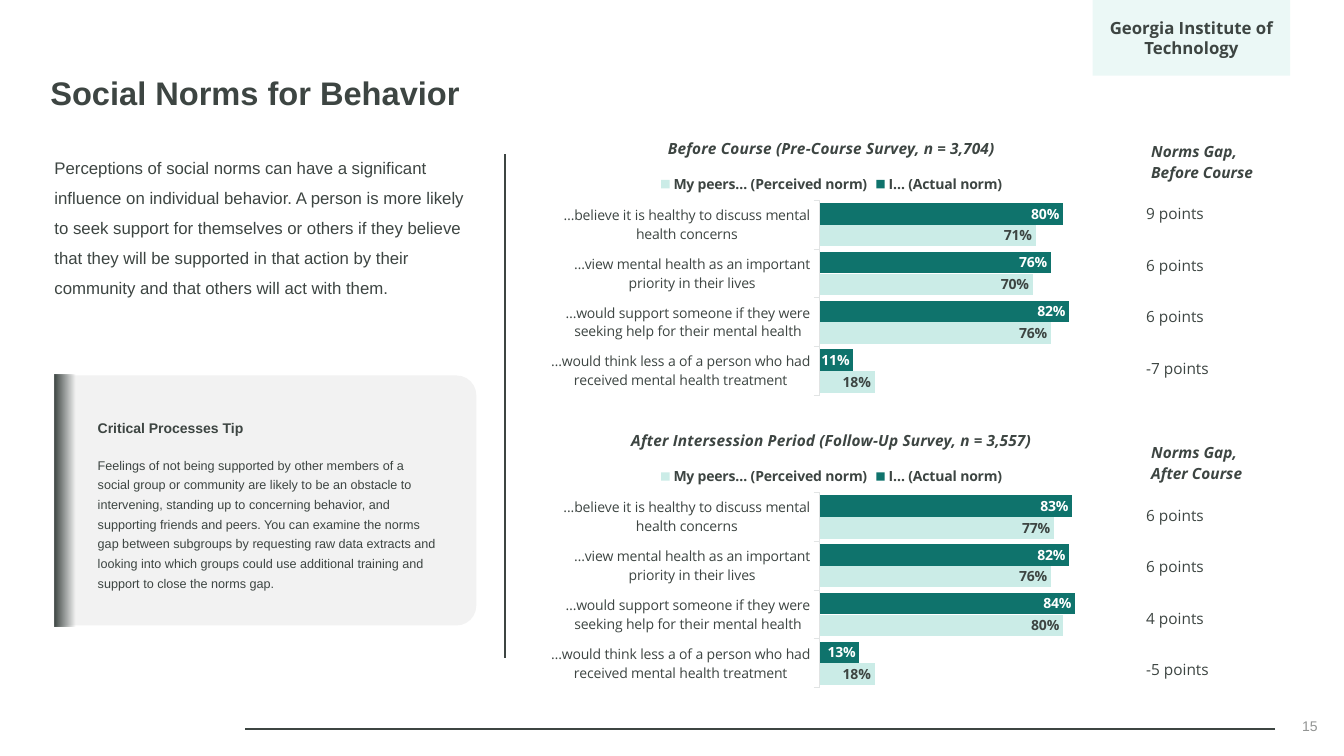
from dataclasses import dataclass

from lxml.etree import SubElement
from pptx import Presentation
from pptx.chart.chart import Chart
from pptx.chart.data import CategoryChartData
from pptx.dml.color import RGBColor
from pptx.enum.chart import XL_CHART_TYPE, XL_LABEL_POSITION, XL_LEGEND_POSITION, XL_TICK_MARK
from pptx.enum.shapes import MSO_CONNECTOR, MSO_SHAPE
from pptx.enum.text import MSO_ANCHOR, MSO_AUTO_SIZE, PP_ALIGN
from pptx.oxml.ns import qn
from pptx.shapes.autoshape import Shape
from pptx.slide import Slide
from pptx.text.text import Font, TextFrame
from pptx.util import Inches, Pt

# The slide is a grid of 160 columns by 90 rows of square cells
COLUMNS, ROWS = 160, 90
CELL = Inches(13.333) / COLUMNS


@dataclass(frozen=True)
class Theme:
    ink: str = "3D4542"
    own: str = "0F736C"
    peers: str = "CBECE7"
    accent: str = "3CC0AF"
    card: str = "F2F2F2"
    axis: str = "E1E4E4"
    muted: str = "929493"
    white: str = "FFFFFF"
    sans: str = "Arial"
    humanist: str = "Open Sans"
    title_size: float = 23.3
    body_size: float = 12
    heading_size: float = 11
    label_size: float = 10
    tip_size: float = 9


THEME = Theme()


@dataclass(frozen=True)
class Area:
    column: float
    row: float
    columns: float
    rows: float

    def box(self) -> tuple[int, int, int, int]:
        return cells(self.column), cells(self.row), cells(self.columns), cells(self.rows)


@dataclass(frozen=True)
class Rule:
    start: tuple[float, float]
    end: tuple[float, float]
    weight: float


@dataclass(frozen=True)
class Survey:
    title: str
    gap_heading: str
    chart_row: float
    table_row: float
    categories: tuple[str, ...]
    own: tuple[int, ...]
    peers: tuple[int, ...]


BELIEFS = (
    "…view mental health as an important priority in their lives",
    "…would support someone if they were seeking help for their mental health",
    "…would think less a of a person who had received mental health treatment",
)
SURVEYS = (
    Survey("Before Course (Pre-Course Survey, n = 3,704)", "Norms Gap, Before Course", 14.52, 16.2,
           ("…believe it is healthy to discuss mental health concerns", *BELIEFS),
           (80, 76, 82, 11), (71, 70, 76, 18)),
    Survey("After Intersession Period (Follow-Up Survey, n = 3,557)", "Norms Gap, After Course", 49.32, 52.08,
           ("...believe it is healthy to discuss mental health concerns", *BELIEFS),
           (83, 82, 84, 13), (77, 76, 80, 18)),
)
RULES = (Rule((151.8, 86.76), (29.16, 86.76), 1.5), Rule((60.12, 18.36), (60.12, 78.36), 1))
PLOT_LAYOUT = {"layoutTarget": "inner", "xMode": "edge", "yMode": "edge",
               "x": 0.48, "y": 0.268, "w": 0.52, "h": 0.668}
BODY = ("Perceptions of social norms can have a significant influence on individual behavior. "
        "A person is more likely to seek support for themselves or others if they believe that they "
        "will be supported in that action by their community and that others will act with them.")
TIP = ("Feelings of not being supported by other members of a social group or community are likely to be "
       "an obstacle to intervening, standing up to concerning behavior, and supporting friends and peers. "
       "You can examine the norms gap between subgroups by requesting raw data extracts and looking into "
       "which groups could use additional training and support to close the norms gap.")


def cells(count: float) -> int:
    return round(count * CELL)


def color(value: str) -> RGBColor:
    return RGBColor.from_string(value)


def style(font: Font, size: float, family: str = THEME.humanist, ink: str = THEME.ink,
          bold: bool = False, italic: bool = False) -> None:
    font.size, font.name, font.bold, font.italic = Pt(size), family, bold, italic
    font.color.rgb = color(ink)


def place(shape: Shape, area: Area) -> None:
    shape.left, shape.top, shape.width, shape.height = area.box()


def frame_text(frame: TextFrame, anchor: MSO_ANCHOR, side_inset: float = 0.1, end_inset: float = 0.05) -> None:
    frame.word_wrap, frame.auto_size, frame.vertical_anchor = True, MSO_AUTO_SIZE.NONE, anchor
    frame.margin_left = frame.margin_right = Inches(side_inset)
    frame.margin_top = frame.margin_bottom = Inches(end_inset)


def add_panel(slide: Slide, kind: MSO_SHAPE, area: Area, fill: str) -> Shape:
    shape = slide.shapes.add_shape(kind, *area.box())
    shape.shadow.inherit = False
    shape.line.fill.background()
    shape.fill.solid()
    shape.fill.fore_color.rgb = color(fill)
    return shape


def add_rule(slide: Slide, rule: Rule) -> None:
    ends = [cells(value) for value in (*rule.start, *rule.end)]
    connector = slide.shapes.add_connector(MSO_CONNECTOR.STRAIGHT, *ends)
    connector.line.color.rgb = color(THEME.ink)
    connector.line.width = Pt(rule.weight)
    SubElement(connector.element.spPr, qn("a:effectLst"))


def set_alpha(shape: Shape, stop: int, percent: int) -> None:
    stop_color = list(shape.element.spPr.iter(qn("a:srgbClr")))[stop]
    SubElement(stop_color, qn("a:alpha")).set("val", str(percent * 1000))


def set_plot_layout(chart: Chart) -> None:
    plot_area = chart.element.find(".//" + qn("c:plotArea"))
    for old in plot_area.findall(qn("c:layout")):
        plot_area.remove(old)
    layout = SubElement(plot_area, qn("c:layout"))
    plot_area.insert(0, layout)
    manual = SubElement(layout, qn("c:manualLayout"))
    for tag, value in PLOT_LAYOUT.items():
        SubElement(manual, qn(f"c:{tag}")).set("val", str(value))


def add_survey_chart(slide: Slide, survey: Survey) -> None:
    data = CategoryChartData(number_format="0%")
    data.categories = survey.categories
    data.add_series("I… (Actual norm)", [value / 100 for value in survey.own])
    data.add_series("My peers… (Perceived norm)", [value / 100 for value in survey.peers])
    area = Area(64.2, survey.chart_row, 69.6, 34.8)
    chart = slide.shapes.add_chart(XL_CHART_TYPE.BAR_CLUSTERED, *area.box(), data).chart
    style(chart.font, THEME.label_size)
    chart.has_title = True
    chart.chart_title.include_in_layout = False
    heading = chart.chart_title.text_frame
    heading.text = survey.title
    style(heading.paragraphs[0].font, THEME.heading_size, bold=True, italic=True)
    chart.has_legend = True
    chart.legend.position = XL_LEGEND_POSITION.TOP
    chart.legend.include_in_layout = False
    style(chart.legend.font, THEME.label_size, bold=True)

    category_axis, value_axis = chart.category_axis, chart.value_axis
    category_axis.reverse_order = True
    category_axis.major_tick_mark = XL_TICK_MARK.OUTSIDE
    category_axis.format.line.color.rgb = color(THEME.axis)
    category_axis.format.line.width = Pt(0.75)
    value_axis.minimum_scale, value_axis.maximum_scale = 0, 1
    value_axis.has_major_gridlines = value_axis.visible = False

    plot = chart.plots[0]
    plot.gap_width, plot.overlap, plot.vary_by_categories = 26, -1, False
    for series, fill, ink in zip(plot.series, (THEME.own, THEME.peers), (THEME.white, THEME.ink)):
        series.format.fill.solid()
        series.format.fill.fore_color.rgb = color(fill)
        labels = series.data_labels
        labels.show_value, labels.position = True, XL_LABEL_POSITION.INSIDE_END
        labels.number_format, labels.number_format_is_linked = "0%", False
        style(labels.font, THEME.label_size, ink=ink, bold=True)
    set_plot_layout(chart)


def add_gap_table(slide: Slide, survey: Survey) -> None:
    gaps = [f"{own - peers} points" for own, peers in zip(survey.own, survey.peers)]
    texts = [survey.gap_heading, *gaps]
    area = Area(135.84, survey.table_row, 16.32, 30.36)
    table = slide.shapes.add_table(len(texts), 1, *area.box()).table
    table.first_row = table.horz_banding = False
    for index, text in enumerate(texts):
        is_heading = index == 0
        table.rows[index].height = cells(5.88 if is_heading else 6.12)
        cell = table.cell(index, 0)
        cell.fill.background()
        cell.vertical_anchor = MSO_ANCHOR.MIDDLE
        cell.margin_left = cell.margin_right = Inches(0.1 if is_heading else 0.05)
        cell.margin_top = cell.margin_bottom = Inches(0.05 if is_heading else 0)
        cell.text = text
        style(cell.text_frame.paragraphs[0].font, THEME.heading_size, bold=is_heading, italic=is_heading)


def main() -> None:
    presentation = Presentation()
    presentation.slide_width, presentation.slide_height = cells(COLUMNS), cells(ROWS)
    slide = presentation.slides.add_slide(presentation.slide_layouts[1])

    # Title and introduction
    title, body = slide.placeholders
    place(title, Area(4.8, 7.08, 138.6, 8.4))
    frame_text(title.text_frame, MSO_ANCHOR.MIDDLE)
    title.text_frame.text = "Social Norms for Behavior"
    paragraph = title.text_frame.paragraphs[0]
    paragraph.alignment, paragraph.line_spacing = PP_ALIGN.LEFT, 0.9
    style(paragraph.font, THEME.title_size, THEME.sans, bold=True)

    place(body, Area(5.28, 16.92, 52.92, 22.68))
    frame_text(body.text_frame, MSO_ANCHOR.TOP)
    body.text_frame.text = BODY
    paragraph = body.text_frame.paragraphs[0]
    paragraph.line_spacing, paragraph.space_before = 1.5, Pt(0)
    properties = paragraph._p.get_or_add_pPr()
    properties.set("marL", "0")
    properties.set("indent", "0")
    SubElement(properties, qn("a:buNone"))
    style(paragraph.font, THEME.body_size, THEME.sans)

    # Tip card with a fading edge
    card = add_panel(slide, MSO_SHAPE.ROUND_2_SAME_RECTANGLE, Area(16.68, 34.44, 29.76, 50.28), THEME.card)
    card.rotation = 90
    card.adjustments[0], card.adjustments[1] = 0.079, 0
    edge = add_panel(slide, MSO_SHAPE.RECTANGLE, Area(6.48, 44.64, 3.6, 30), THEME.ink)
    edge.fill.gradient()
    edge.fill.gradient_angle = 0
    for stop, position in zip(edge.fill.gradient_stops, (0, 0.7)):
        stop.color.rgb = color(THEME.ink)
        stop.position = position
    set_alpha(edge, 1, 0)

    tip = slide.shapes.add_textbox(*Area(8.64, 45, 46.44, 29.64).box()).text_frame
    frame_text(tip, MSO_ANCHOR.MIDDLE, 0.25, 0)
    tip.text = f"Critical Processes Tip\n{TIP}"
    heading, advice = tip.paragraphs
    heading.line_spacing = advice.line_spacing = 1.3
    advice.space_before = Pt(12)
    style(heading.font, THEME.label_size, THEME.sans, bold=True)
    style(advice.font, THEME.tip_size, THEME.sans)

    # Rules, charts and gap tables
    for rule in RULES:
        add_rule(slide, rule)
    for survey in SURVEYS:
        add_survey_chart(slide, survey)
        add_gap_table(slide, survey)

    # Institution badge and slide number
    badge = add_panel(slide, MSO_SHAPE.RECTANGLE, Area(130.08, 0, 23.52, 9), THEME.accent)
    set_alpha(badge, 0, 10)
    number = slide.shapes.add_textbox(*Area(122.04, 84, 36, 4.8).box())
    for shape, text, alignment, size, family, ink in (
        (badge, "Georgia Institute of Technology", PP_ALIGN.CENTER, THEME.body_size, THEME.humanist, THEME.ink),
        (number, "15", PP_ALIGN.RIGHT, THEME.label_size, THEME.sans, THEME.muted),
    ):
        frame_text(shape.text_frame, MSO_ANCHOR.MIDDLE, end_inset=0)
        shape.text_frame.text = text
        paragraph = shape.text_frame.paragraphs[0]
        paragraph.alignment = alignment
        style(paragraph.font, size, family, ink, bold=shape is badge)

    presentation.save("out.pptx")


if __name__ == "__main__":
    main()
